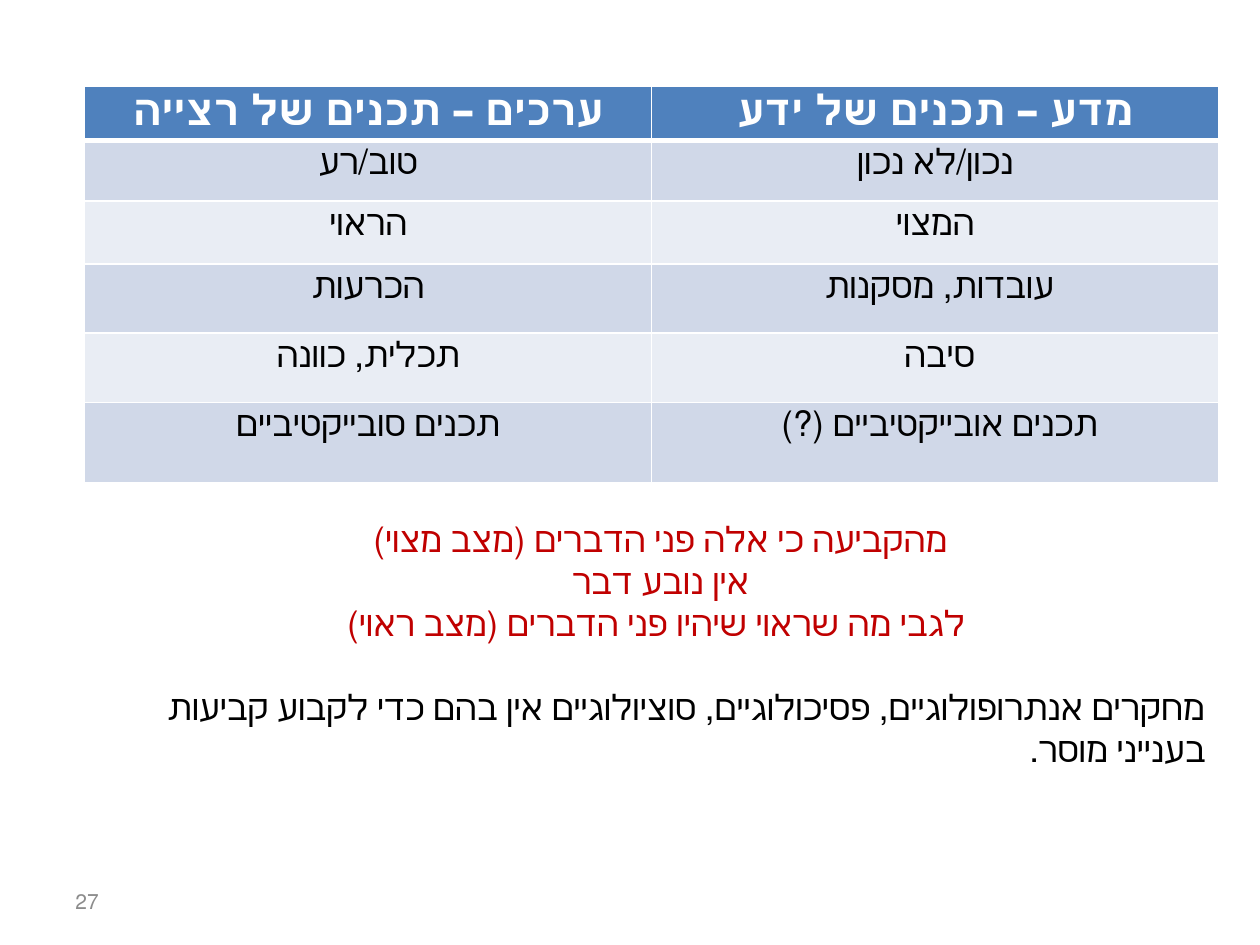
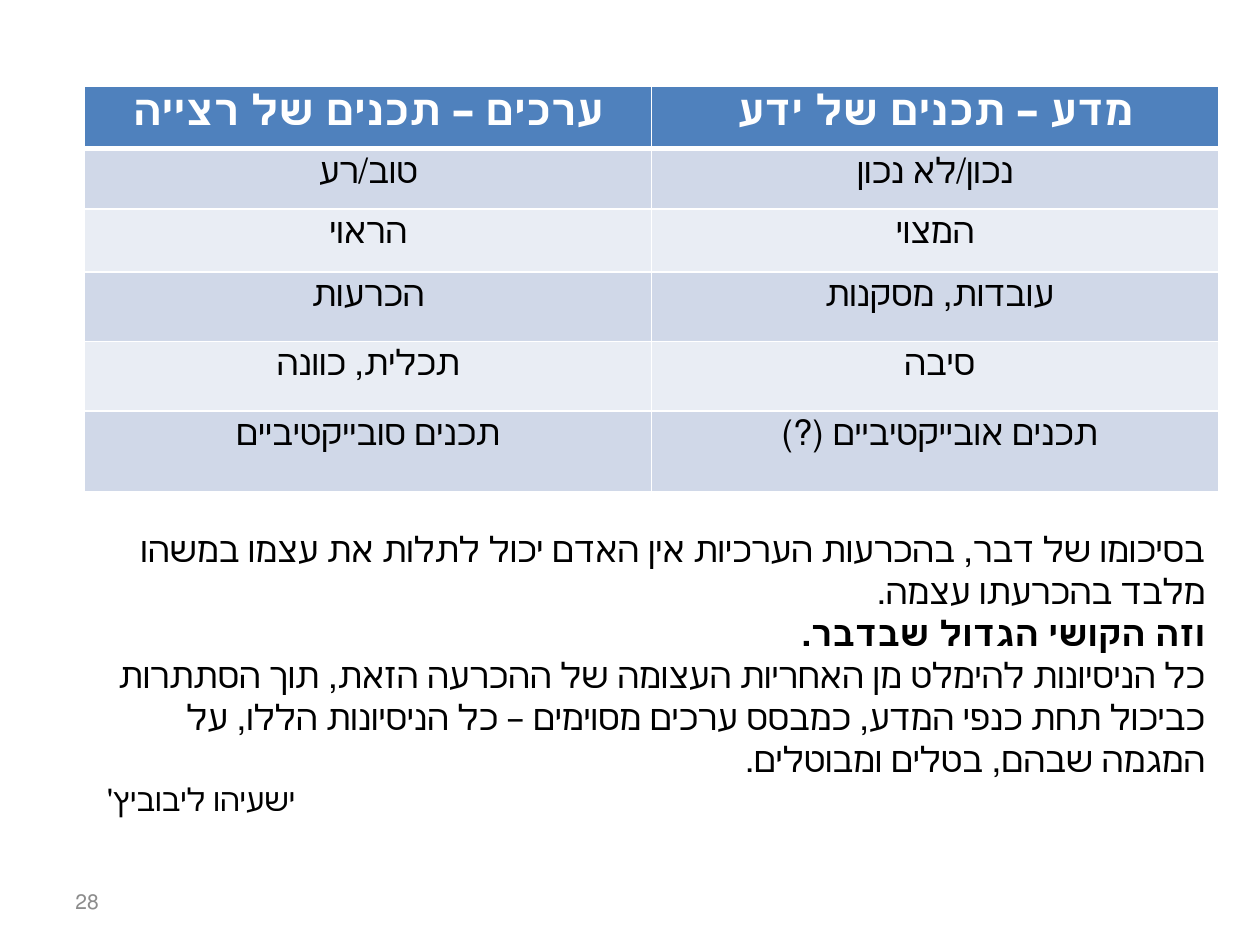
from dataclasses import dataclass

from lxml import etree
from pptx import Presentation
from pptx.dml.color import RGBColor
from pptx.enum import text
from pptx.oxml import ns
from pptx.slide import Slide
from pptx.text.text import TextFrame
from pptx.util import Pt

WHITE = RGBColor(0xFF, 0xFF, 0xFF)
BLACK = RGBColor(0x00, 0x00, 0x00)
RED = RGBColor(0xC0, 0x00, 0x00)
GREY = RGBColor(0x8C, 0x8C, 0x8C)
HEADER = RGBColor(0x4F, 0x81, 0xBD)
BANDS = (RGBColor(0xE9, 0xED, 0xF4), RGBColor(0xD0, 0xD8, 0xE8))
FONT = "Calibri"
LEFT, CENTER, RIGHT = text.PP_ALIGN.LEFT, text.PP_ALIGN.CENTER, text.PP_ALIGN.RIGHT

ROW_HEIGHTS = (28.8, 34.5, 36, 39.6, 39.6, 46)
ROWS = (
    ("ערכים – תכנים של רצייה", "מדע – תכנים של ידע"),
    ("טוב/רע", "נכון/לא נכון"),
    ("הראוי", "המצוי"),
    ("הכרעות", "עובדות, מסקנות "),
    ("תכלית, כוונה", "סיבה "),
    ("תכנים סובייקטיביים", "תכנים אובייקטיביים (?) "),
)


@dataclass(frozen=True)
class Line:
    """One right-to-left paragraph and its format."""

    words: str
    size: float = 20
    color: RGBColor = BLACK
    bold: bool = False
    align: text.PP_ALIGN = RIGHT
    before: float = 0


@dataclass(frozen=True)
class Page:
    """What differs from slide to slide."""

    number: int
    top: float
    height: float
    lines: tuple[Line, ...]


PAGES = (
    Page(27, 292.3, 177, (
        Line("מהקביעה כי אלה פני הדברים (מצב מצוי) ", color=RED, align=CENTER),
        Line("אין נובע דבר ", color=RED, align=CENTER),
        Line("לגבי מה שראוי שיהיו פני הדברים (מצב ראוי)", color=RED, align=CENTER),
        Line("מחקרים אנתרופולוגיים, פסיכולוגיים, סוציולוגיים אין בהם כדי לקבוע "
             "קביעות בענייני מוסר. ", before=24),
    )),
    Page(28, 298, 201, (
        Line("בסיכומו של דבר, בהכרעות הערכיות אין האדם יכול לתלות את עצמו במשהו "
             "מלבד בהכרעתו עצמה. "),
        Line("וזה הקושי הגדול שבדבר.", bold=True),
        Line("כל הניסיונות להימלט מן האחריות העצומה של ההכרעה הזאת, תוך הסתתרות "
             "כביכול תחת כנפי המדע, כמבסס ערכים מסוימים – כל הניסיונות הללו, על "
             "המגמה שבהם, בטלים ומבוטלים."),
        Line("ישעיהו ליבוביץ'", size=18, align=LEFT),
    )),
)


def write(tf: TextFrame, words: str, *, size: float = 20, color: RGBColor = BLACK,
          bold: bool = False, align: text.PP_ALIGN = RIGHT, before: float = 0) -> None:
    """Fill the empty first paragraph, or append one, with formatted text."""
    p = tf.paragraphs[0] if not tf.text else tf.add_paragraph()
    p.alignment, p.space_before = align, Pt(before)
    p._p.get_or_add_pPr().set("rtl", "1")
    r = p.add_run()
    r.text = words
    r.font.name, r.font.size, r.font.bold = FONT, Pt(size), bold
    r.font.color.rgb = color


def add_text(s: Slide, left: float, top: float, width: float, height: float,
             lines: tuple[Line, ...], anchor: text.MSO_ANCHOR) -> None:
    """Add a wrapped text box holding the lines."""
    tf = s.shapes.add_textbox(Pt(left), Pt(top), Pt(width), Pt(height)).text_frame
    tf.word_wrap, tf.vertical_anchor = True, anchor
    for line in lines:
        write(tf, line.words, size=line.size, color=line.color, bold=line.bold,
              align=line.align, before=line.before)


def add_borders(tc_pr: etree._Element, bottom: float, top: float) -> None:
    """Put white lines around a cell, ahead of its fill."""
    widths = {"a:lnL": 1, "a:lnR": 1, "a:lnT": top, "a:lnB": bottom}
    for i, (tag, width) in enumerate(widths.items()):
        ln = etree.Element(ns.qn(tag), w=str(Pt(width)))
        fill = etree.SubElement(ln, ns.qn("a:solidFill"))
        etree.SubElement(fill, ns.qn("a:srgbClr"), val=str(WHITE))
        tc_pr.insert(i, ln)


def add_comparison(s: Slide) -> None:
    """Add the table that sets values against science."""
    tbl = s.shapes.add_table(len(ROWS), 2, Pt(48.4), Pt(49), Pt(648),
                             Pt(sum(ROW_HEIGHTS))).table
    for i, (words, height) in enumerate(zip(ROWS, ROW_HEIGHTS)):
        tbl.rows[i].height = Pt(height)
        head = i == 0
        for j, word in enumerate(words):
            cell = tbl.cell(i, j)
            cell.fill.solid()
            cell.fill.fore_color.rgb = HEADER if head else BANDS[i % 2]
            add_borders(cell._tc.get_or_add_tcPr(), bottom=3 if head else 1,
                        top=3 if i == 1 else 1)
            write(cell.text_frame, word, size=24 if head else 20,
                  color=WHITE if head else BLACK, bold=head, align=CENTER)


def main() -> None:
    """Build and save the slides."""
    prs = Presentation()
    prs.slide_width, prs.slide_height = Pt(720), Pt(540)
    for page in PAGES:
        s = prs.slides.add_slide(prs.slide_layouts[6])
        add_comparison(s)
        add_text(s, 54, page.top, 642, page.height, page.lines, text.MSO_ANCHOR.TOP)
        number = Line(str(page.number), size=12, color=GREY, align=LEFT)
        add_text(s, 36, 500.5, 168, 28.8, (number,), text.MSO_ANCHOR.MIDDLE)
    prs.save("out.pptx")


if __name__ == "__main__":
    main()
